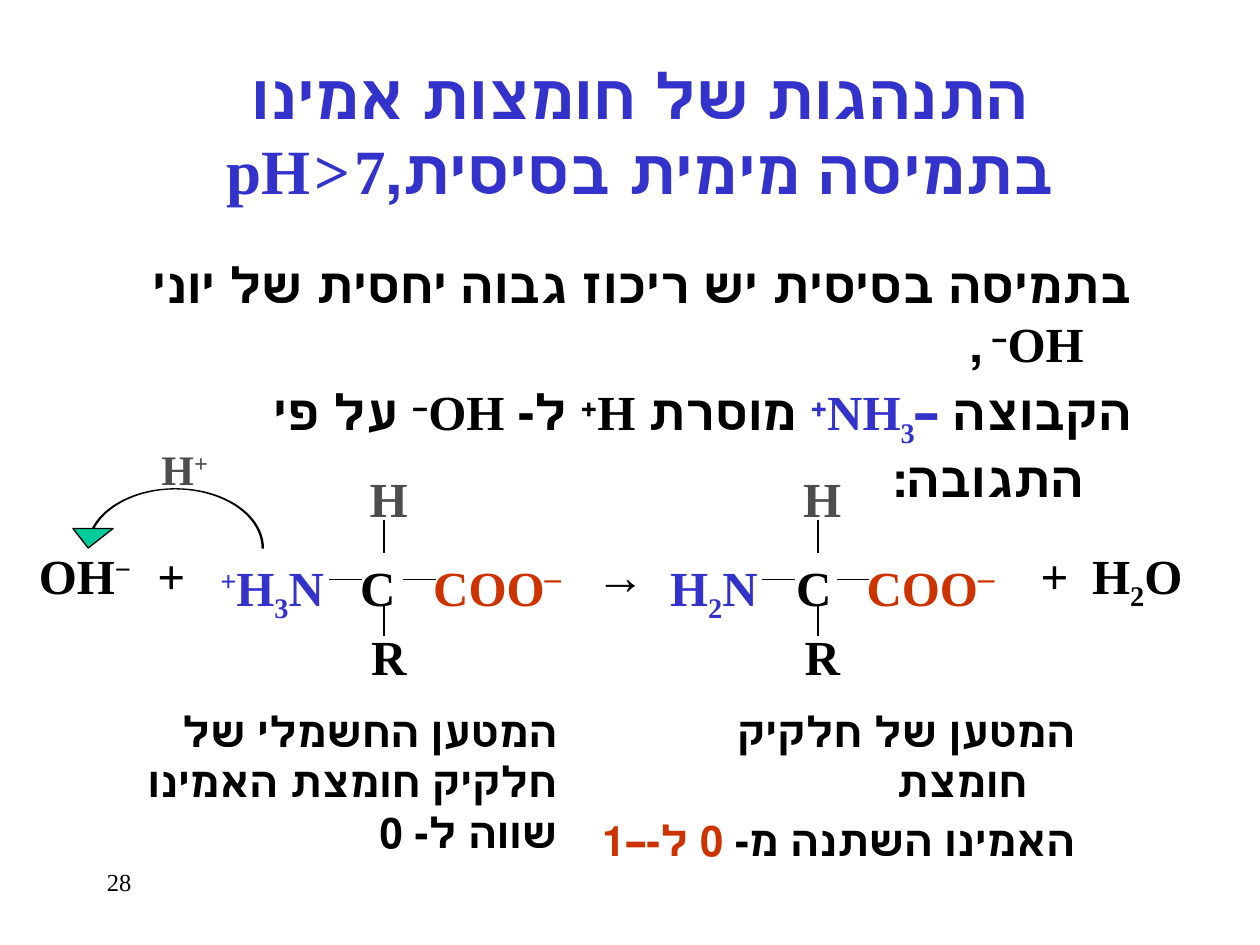
import pptx
import pptx.util
import pptx.dml.color
import pptx.enum.shapes
import pptx.enum.text
import pptx.oxml.ns
import lxml.etree

Inches = pptx.util.Inches
Pt = pptx.util.Pt
RGBColor = pptx.dml.color.RGBColor
LEFT = pptx.enum.text.PP_ALIGN.LEFT
CENTER = pptx.enum.text.PP_ALIGN.CENTER
RIGHT = pptx.enum.text.PP_ALIGN.RIGHT
qn = pptx.oxml.ns.qn

BLACK = RGBColor(0x00, 0x00, 0x00)
BLUE = RGBColor(0x33, 0x33, 0xCC)
RED = RGBColor(0xCC, 0x33, 0x00)
GRAY = RGBColor(0x4D, 0x4D, 0x4D)
GREEN = RGBColor(0x00, 0xCC, 0x99)
SUPER, SUB = 30000, -25000

deck = pptx.Presentation()
deck.slide_width, deck.slide_height = Inches(10), Inches(7.5)
page = deck.slides.add_slide(deck.slide_layouts[6])


def add_text(left, top, width, height, paragraphs, size, color=BLACK, align=LEFT,
             bold=True, rtl=False, hanging=0, tabs=()):
    """Each paragraph is a list of runs: (text, baseline, color, size)."""
    box = page.shapes.add_textbox(Inches(left), Inches(top), Inches(width), Inches(height))
    frame = box.text_frame
    frame.word_wrap = True
    for index, runs in enumerate(paragraphs):
        para = frame.paragraphs[0] if index == 0 else frame.add_paragraph()
        para.alignment = align
        para.font.name, para.font.size, para.font.bold = "Times New Roman", Pt(size), bold
        para.font.color.rgb = color
        if index:
            para.space_before = Pt(0.2 * size)
        properties = para._p.get_or_add_pPr()
        if rtl:
            properties.set("rtl", "1")
        if hanging:
            properties.set("marL", str(Inches(hanging)))
            properties.set("indent", str(-Inches(hanging)))
        if tabs:
            tab_list = lxml.etree.Element(qn("a:tabLst"))
            for position in tabs:
                lxml.etree.SubElement(tab_list, qn("a:tab"), pos=str(Inches(position)), algn="l")
            properties.find(qn("a:defRPr")).addprevious(tab_list)
        for text, baseline, run_color, run_size in runs:
            for number, line in enumerate(text.split("\n")):
                if number:
                    para.add_line_break()
                span = para.add_run()
                span.text = line
                if baseline:
                    span._r.get_or_add_rPr().set("baseline", str(baseline))
                if run_color is not None:
                    span.font.color.rgb = run_color
                if run_size:
                    span.font.size = Pt(run_size)
    return box


def run(text, baseline=0, color=None, size=None):
    return text, baseline, color, size


# Title
title = add_text(0.83, 0.42, 8.5, 1.25, [[
    run("התנהגות של חומצות אמינו\nבתמיסה מימית בסיסית,pH"), run(" ", size=10),
    run(">"), run(" ", size=10), run("7"),
]], 36, BLUE, CENTER, rtl=True)
title.text_frame.vertical_anchor = pptx.enum.text.MSO_ANCHOR.MIDDLE

# Slide number
add_text(0.75, 6.83, 2.08, 0.5, [[run("28")]], 14, bold=False)

# Explanation
add_text(0.58, 1.97, 8.5, 1.25, [
    [run("בתמיסה בסיסית יש ריכוז גבוה יחסית של יוני\nOH"), run("− ", SUPER), run(",")],
    [run("הקבוצה "), run("–NH", color=BLUE), run("3", SUB, BLUE), run("+", SUPER, BLUE),
     run(" מוסרת H"), run("+", SUPER), run(" ל- OH"), run("−", SUPER),
     run(" על פי\nהתגובה:")],
], 28, align=RIGHT, rtl=True, hanging=0.38)

# Charge notes under the two molecules
add_text(4.64, 5.55, 3.99, 1.09, [
    [run("המטען של חלקיק חומצת")],
    [run("האמינו השתנה מ- "), run("0 ל-–1", color=RED)],
], 24, align=RIGHT, rtl=True, hanging=0.38)
add_text(0.73, 5.55, 3.79, 0.9, [[run("המטען החשמלי של חלקיק חומצת האמינו שווה ל- 0")]],
         24, align=RIGHT, rtl=True)

# Proton transfer arrow
transfer = page.shapes.add_shape(pptx.enum.shapes.MSO_SHAPE.CURVED_DOWN_ARROW,
                                 Inches(0.54), Inches(3.88), Inches(1.55), Inches(0.47))
transfer.shadow.inherit = False
for index, value in enumerate((0.02, 0.68, 0.33)):
    transfer.adjustments[index] = value
transfer._element.spPr.find(qn("a:xfrm")).set("flipH", "1")
transfer.fill.solid()
transfer.fill.fore_color.rgb = GREEN
transfer.line.color.rgb = BLACK
transfer.line.width = Pt(0.75)
add_text(1.07, 3.47, 0.79, 0.5, [[run("H"), run("+", SUPER)]], 24, GRAY, CENTER)

# Amino acid before and after: center of its bonds, formula left, amino group, tabs
acid = [run("\tC\t", color=BLACK), run("COO", color=RED), run("–", SUPER, RED, 32)]
molecules = [
    (3.05, 1.65, [run("+", SUPER), run("H"), run("3", SUB), run("N")], (1.11, 1.69)),
    (6.49, 5.22, [run("H"), run("2", SUB), run("N")], (1.0, 1.56)),
]
for center, formula_left, amino, tabs in molecules:
    for atom, top, color in (("H", 3.67, GRAY), ("R", 4.92, BLACK)):
        add_text(center - 0.36, top, 0.79, 0.57, [[run(atom)]], 28, color, CENTER)
    add_text(formula_left, 4.32, 3, 0.57, [amino + acid], 28, BLUE, tabs=tabs)
    bonds = [(-0.44, 4.6, -0.18, 4.6), (0.15, 4.6, 0.41, 4.6),
             (0, 5.05, 0, 4.79), (0, 4.39, 0, 4.13)]
    for start_x, start_y, end_x, end_y in bonds:
        bond = page.shapes.add_connector(
            pptx.enum.shapes.MSO_CONNECTOR.STRAIGHT,
            Inches(center + start_x), Inches(start_y), Inches(center + end_x), Inches(end_y))
        bond.line.color.rgb = BLACK
        bond.line.width = Pt(1)
        lxml.etree.SubElement(bond._element.spPr, qn("a:effectLst"))

# Rest of the reaction equation
add_text(0.21, 4.28, 9.79, 0.57, [[
    run("OH"), run("−", SUPER), run("\t+\t→\t+\tH"), run("2", SUB), run("O"),
]], 28, tabs=(0.94, 4.42, 7.95, 8.36))

deck.save("out.pptx")
